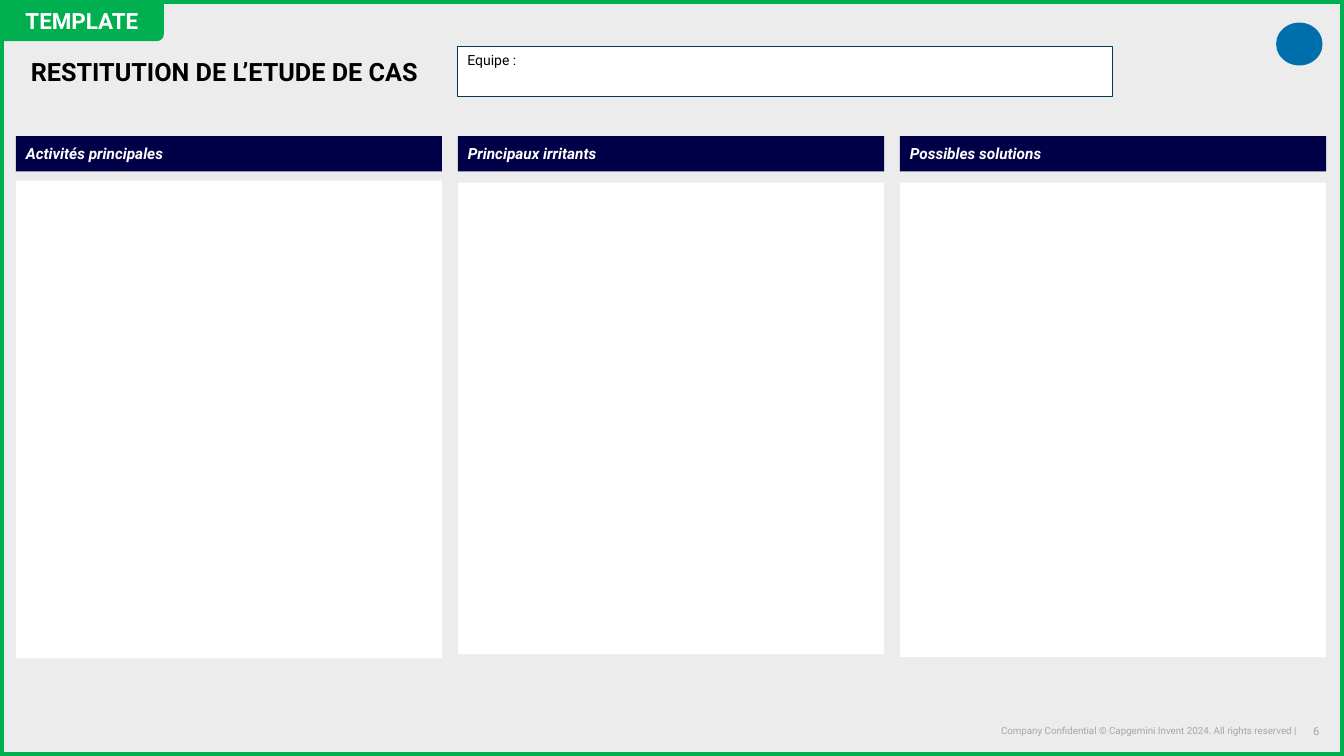
from pptx import Presentation
from pptx.dml.color import RGBColor
from pptx.enum import shapes, text
from pptx.util import Cm, Pt

FONT = "Roboto"
COLORS = {
    "background": "ECECEC",
    "green": "00B050",
    "navy": "000048",
    "outline": "003856",
    "emblem": "0070AD",
    "white": "FFFFFF",
    "black": "000000",
    "grey": "A6A6A6",
}
SLIDE_WIDTH, SLIDE_HEIGHT = 33.87, 19.05
RECTANGLE = shapes.MSO_SHAPE.RECTANGLE
TOP, MIDDLE = text.MSO_ANCHOR.TOP, text.MSO_ANCHOR.MIDDLE
LEFT, CENTER, RIGHT = text.PP_ALIGN.LEFT, text.PP_ALIGN.CENTER, text.PP_ALIGN.RIGHT


def color(name):
    return RGBColor.from_string(COLORS[name])


def write(shape, words, size, ink, bold=False, italic=False,
          align=LEFT, anchor=TOP, margins=(0.25, 0.13)):
    frame = shape.text_frame
    frame.word_wrap = True
    frame.vertical_anchor = anchor
    frame.margin_left = frame.margin_right = Cm(margins[0])
    frame.margin_top = frame.margin_bottom = Cm(margins[1])
    paragraph = frame.paragraphs[0]
    paragraph.alignment = align
    run = paragraph.add_run()
    run.text = words
    run.font.name = FONT
    run.font.size = Pt(size)
    run.font.bold = bold
    run.font.italic = italic
    run.font.color.rgb = color(ink)


def add_block(slide, kind, box, fill=None, line=None, line_width=1):
    shape = slide.shapes.add_shape(kind, *map(Cm, box))
    shape.shadow.inherit = False
    if fill:
        shape.fill.solid()
        shape.fill.fore_color.rgb = color(fill)
    else:
        shape.fill.background()
    if line:
        shape.line.color.rgb = color(line)
        shape.line.width = Pt(line_width)
    else:
        shape.line.fill.background()
    return shape


def add_label(slide, box, words, size, ink, **style):
    write(slide.shapes.add_textbox(*map(Cm, box)), words, size, ink, **style)


def add_header(slide, left, top, width):
    # Title, team field and a plain emblem at the right
    add_label(slide, (left, top + 0.13, 10.95, 1.04),
              "RESTITUTION DE L’ETUDE DE CAS", 18, "black", bold=True)
    team = add_block(slide, RECTANGLE, (left + 11, top, 16.51, 1.27),
                     "white", "outline")
    write(team, "Equipe :", 10, "black")
    add_block(slide, shapes.MSO_SHAPE.OVAL,
              (left + width - 1.17, top - 0.6, 1.17, 1.08), "emblem")


def add_column(slide, left, top, width, heading, gap, height):
    # Heading bar above an empty panel
    bar_height = 0.89
    bar = add_block(slide, RECTANGLE, (left, top, width, bar_height), "navy")
    write(bar, heading, 11, "white", bold=True, italic=True, anchor=MIDDLE)
    add_block(slide, RECTANGLE,
              (left, top + bar_height + gap, width, height), "white")


def add_columns(slide, left, top, width):
    # Three equal columns
    columns = [
        ("Activités principales", 0.23, 12.04),
        ("Principaux irritants", 0.28, 11.89),
        ("Possibles solutions", 0.28, 11.96),
    ]
    gutter = 0.4
    column_width = (width - gutter * (len(columns) - 1)) / len(columns)
    for index, column in enumerate(columns):
        add_column(slide, left + index * (column_width + gutter), top,
                   column_width, *column)


def add_footer(slide, left, top, width, height):
    # Copyright line and page number
    add_label(slide, (left, top, width - 0.58, height),
              "Company Confidential © Capgemini Invent 2024. All rights reserved |",
              7, "grey", align=RIGHT, anchor=MIDDLE, margins=(0, 0))
    add_label(slide, (left + width - 0.64, top, 0.64, height),
              "6", 8, "grey", align=RIGHT, margins=(0, 0.13))


def add_frame(slide, left, top, width, height):
    # Green border with the corner tag
    add_block(slide, RECTANGLE, (left, top, width, height),
              line="green", line_width=6)
    tag = add_block(slide, shapes.MSO_SHAPE.ROUND_2_DIAG_RECTANGLE,
                    (left, top, 4.13, 1.04), "green")
    write(tag, "TEMPLATE", 16, "white", bold=True, align=CENTER, anchor=MIDDLE)


def main():
    presentation = Presentation()
    presentation.slide_width = Cm(SLIDE_WIDTH)
    presentation.slide_height = Cm(SLIDE_HEIGHT)
    slide = presentation.slides.add_slide(presentation.slide_layouts[6])
    slide.background.fill.solid()
    slide.background.fill.fore_color.rgb = color("background")

    add_footer(slide, 20.07, 18.11, 13.18, 0.61)
    add_header(slide, 0.53, 1.17, 32.8)
    add_columns(slide, 0.4, 3.43, 33.02)
    add_frame(slide, 0, 0, SLIDE_WIDTH, SLIDE_HEIGHT)
    presentation.save("out.pptx")


if __name__ == "__main__":
    main()
